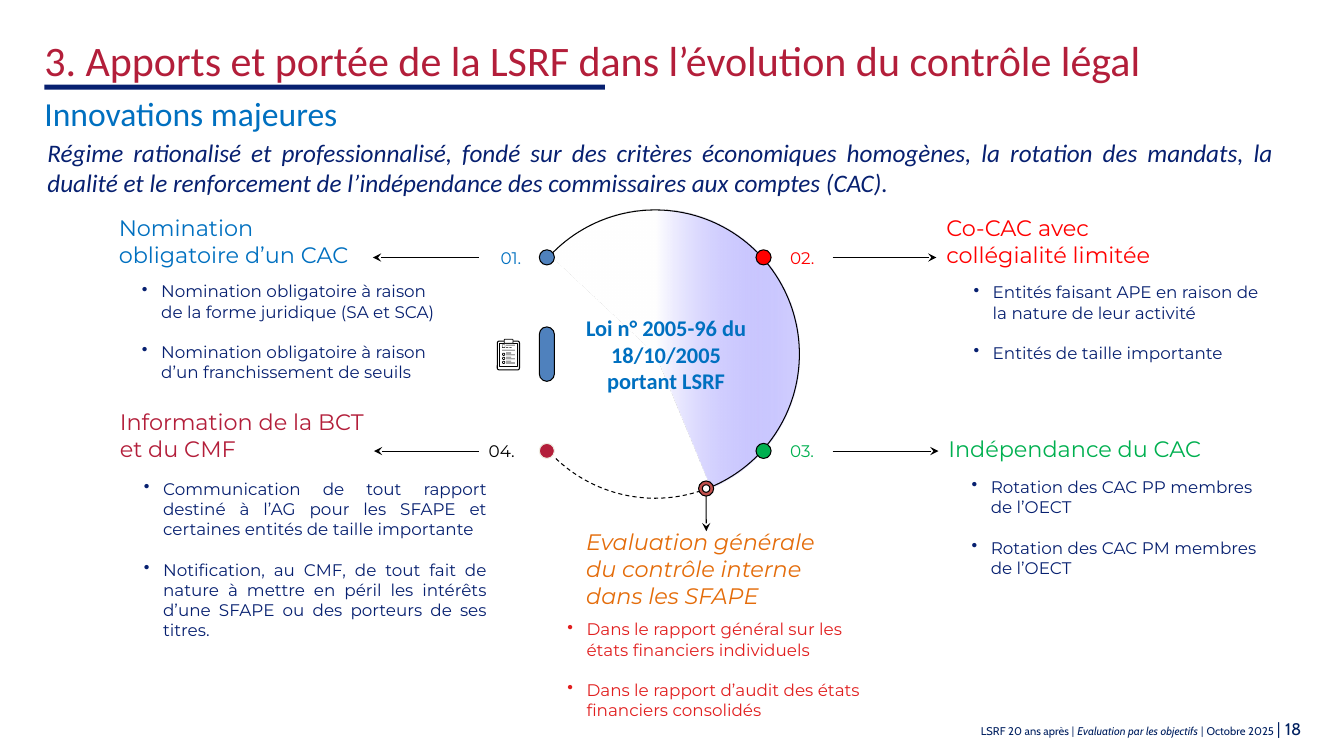
from dataclasses import dataclass

from lxml import etree
from pptx import Presentation
from pptx.dml.color import RGBColor
from pptx.enum.dml import MSO_LINE
from pptx.enum.shapes import MSO_CONNECTOR, MSO_SHAPE
from pptx.enum.text import MSO_ANCHOR as Anchor, PP_ALIGN as Align
from pptx.oxml import parse_xml
from pptx.oxml.ns import nsdecls, qn
from pptx.util import Inches, Pt

WIDTH, HEIGHT = Inches(13.33), Inches(7.5)
COLUMN, ROW = WIDTH / 160, HEIGHT / 90
PADDING = Inches(0.1)
COLORS = {
    "navy": "072070", "footer": "002060", "crimson": "B31E3A", "blue": "0070C0",
    "steel": "4F81BD", "red": "FF0000", "green": "00B050", "orange": "E46C0A",
    "scarlet": "E11F1F", "brick": "C0504D", "violet": "6C63FF", "cream": "EEECE1",
    "black": "000000", "white": "FFFFFF",
}


@dataclass
class Box:
    """Area counted in grid columns and rows."""
    x: float
    y: float
    w: float
    h: float

    def emu(self):
        return (round(self.x * COLUMN), round(self.y * ROW),
                round(self.w * COLUMN), round(self.h * ROW))

    def share(self, x, y, w, h):
        """Sub-area given as shares of this box."""
        return Box(self.x + x * self.w, self.y + y * self.h, w * self.w, h * self.h)

    def around(self, dx, dy, w, h):
        """Area centred at an offset from this box's centre."""
        return Box(self.x + self.w / 2 + dx - w / 2, self.y + self.h / 2 + dy - h / 2, w, h)


def rgb(name):
    return RGBColor.from_string(COLORS[name])


def add_shape(page, kind, box, fill=None, line=None, width=0.75):
    shape = page.shapes.add_shape(kind, *box.emu())
    shape.shadow.inherit = False
    if fill:
        shape.fill.solid()
        shape.fill.fore_color.rgb = rgb(fill)
    else:
        shape.fill.background()
    if line:
        shape.line.color.rgb = rgb(line)
        shape.line.width = Pt(width)
    else:
        shape.line.fill.background()
    return shape


def add_text(page, box, texts, size, color, font="Montserrat", align=Align.LEFT,
             anchor=Anchor.TOP, padded=True, bullets=False, bold=False, italic=False):
    shape = page.shapes.add_textbox(*box.emu())
    frame = shape.text_frame
    frame.word_wrap = True
    frame.vertical_anchor = anchor
    frame.margin_left = frame.margin_right = PADDING if padded else 0
    frame.margin_top = frame.margin_bottom = PADDING if padded else 0
    for index, text in enumerate(texts):
        para = frame.paragraphs[0] if index == 0 else frame.add_paragraph()
        para.text = text
        para.alignment = align
        para.font.name, para.font.size = font, Pt(size)
        para.font.bold, para.font.italic = bold, italic
        para.font.color.rgb = rgb(color)
        if index:
            para.space_before = Pt(14.5)
        if bullets:
            add_bullet(para)
    return shape


def add_bullet(para):
    props = para._p.get_or_add_pPr()
    props.set("marL", str(Inches(0.19)))
    props.set("indent", str(-Inches(0.19)))
    bullet = parse_xml(f'<a:buChar {nsdecls("a")} char="•"/>')
    props.find(qn("a:defRPr")).addprevious(bullet)


def add_arrow(page, start=(0, 0), begin=None, end=None):
    """Arrow from a grid point, or from a (shape, side) pair, to another pair."""
    x, y = round(start[0] * COLUMN), round(start[1] * ROW)
    arrow = page.shapes.add_connector(MSO_CONNECTOR.STRAIGHT, x, y, x, y)
    if begin:
        arrow.begin_connect(*begin)
    arrow.end_connect(*end)
    arrow.line.color.rgb = rgb("black")
    arrow.line.width = Pt(0.75)
    etree.SubElement(arrow.line._get_or_add_ln(), qn("a:tailEnd"), type="stealth")
    etree.SubElement(arrow._element.spPr, qn("a:effectLst"))


def add_header(page, box):
    add_shape(page, MSO_SHAPE.RECTANGLE, Box(box.x, box.y + 6.12, 66.72, 0.6), "navy")
    add_text(page, Box(box.x, box.y + 7.1, 68.76, 5), ["Innovations majeures"], 24, "blue",
             "Calibri", padded=False)
    add_text(page, Box(box.x, box.y + 0.15, box.w, 6.24),
             ["3. Apports et portée de la LSRF dans l’évolution du contrôle légal"],
             30, "crimson", "Calibri", padded=False)
    add_text(page, Box(box.x + 0.36, box.y + 12.4, box.w, 7.44),
             ["Régime rationalisé et professionnalisé, fondé sur des critères économiques "
              "homogènes, la rotation des mandats, la dualité et le renforcement de "
              "l’indépendance des commissaires aux comptes (CAC)."],
             18, "navy", "Calibri", Align.JUSTIFY, padded=False, italic=True)


def add_footer(page, box):
    footer = add_text(page, box, [""], 8, "footer", "Cabin", Align.RIGHT, padded=False)
    para = footer.text_frame.paragraphs[0]
    for text, font, size, italic in (
            ("LSRF 20 ans après ", "Cabin", 8, False), ("| ", "Lato", 8, False),
            ("Evaluation par les objectifs ", "Cabin", 8, True), ("| ", "Lato", 8, False),
            ("Octobre 2025 ", "Cabin", 8, False), ("| ", "Lato", 12, False),
            ("18", "Cabin", 12, False)):
        span = para.add_run()
        span.text = text
        span.font.name, span.font.size, span.font.italic = font, Pt(size), italic
        span.font.color.rgb = rgb("footer")


def add_arc(page, box, start, stop):
    """Clockwise arc between two angles in degrees."""
    arc = add_shape(page, MSO_SHAPE.ARC, box, line="black")
    arc.adjustments[0], arc.adjustments[1] = start * 0.6, stop * 0.6
    return arc


def add_dial(page, box):
    """Ring with its dots and label; returns the lower ring marker's box."""
    add_arc(page, box, 71.6, 134.38).line.dash_style = MSO_LINE.DASH
    sector = add_arc(page, box, 223.18, 67.44)
    props = sector._element.spPr
    props.replace(props.find(qn("a:noFill")), parse_xml(
        f'<a:gradFill {nsdecls("a")} rotWithShape="1"><a:gsLst>'
        f'<a:gs pos="0"><a:srgbClr val="{COLORS["violet"]}"><a:alpha val="30000"/></a:srgbClr></a:gs>'
        f'<a:gs pos="50000"><a:srgbClr val="{COLORS["white"]}"/></a:gs>'
        f'<a:gs pos="100000"><a:srgbClr val="{COLORS["white"]}"/></a:gs>'
        '</a:gsLst><a:lin ang="10800000" scaled="0"/></a:gradFill>'))
    for across, down, fill, line in ((-1, -1, "steel", "black"), (1, -1, "red", "black"),
                                     (-1, 1, "crimson", "cream"), (1, 1, "green", "black")):
        add_shape(page, MSO_SHAPE.OVAL, box.around(across * 12.9, down * 11.52, 1.8, 1.8),
                  fill, line)
    capsule = add_shape(page, MSO_SHAPE.ROUNDED_RECTANGLE, box.around(-12.9, 0, 1.8, 6.48),
                        "steel", "black")
    capsule.adjustments[0] = 0.5
    add_text(page, box.around(1.3, 0, 22.08, 8.28), ["Loi n° 2005-96 du 18/10/2005 portant LSRF"],
             16, "blue", "Calibri", Align.CENTER, Anchor.MIDDLE, bold=True)
    marker = box.around(6.06, 16, 1.8, 1.8)
    add_shape(page, MSO_SHAPE.DONUT, marker, "brick", "black").adjustments[0] = 0.25
    return marker


def add_clipboard(page, box):
    board = add_shape(page, MSO_SHAPE.ROUNDED_RECTANGLE, box.share(0, 0.08, 1, 0.92),
                      "white", "black", 0.75)
    board.adjustments[0] = 0.08
    add_shape(page, MSO_SHAPE.RECTANGLE, box.share(0.1, 0.15, 0.8, 0.75), None, "black", 0.5)
    add_shape(page, MSO_SHAPE.ROUND_2_SAME_RECTANGLE, box.share(0.31, 0.02, 0.4, 0.13),
              "white", "black", 0.5)
    add_shape(page, MSO_SHAPE.FRAME, box.share(0.22, 0.19, 0.14, 0.1), "black")
    for left, top, width in ((0.4, 0.2, 0.4), (0.4, 0.27, 0.1), (0.55, 0.27, 0.1),
                             (0.22, 0.36, 0.58)):
        add_shape(page, MSO_SHAPE.RECTANGLE, box.share(left, top, width, 0.02), "black")
    for item in range(3):
        top = 0.45 + item * 0.13
        add_shape(page, MSO_SHAPE.DONUT, box.share(0.22, top, 0.14, 0.1), "black")
        for line, width in enumerate((0.23, 0.4)):
            add_shape(page, MSO_SHAPE.RECTANGLE,
                      box.share(0.4, top + line * 0.06, width, 0.02), "black")


def add_branch(page, box, number, number_color, color, title, body, points, align=Align.LEFT):
    """Heading in its box, bullets in body, and an arrow from the number beside the dial."""
    on_left = box.x < 80
    number_box = Box(57 if on_left else 92.88, box.y, 6.24, box.h)
    label = add_text(page, number_box, [number], 12, number_color, anchor=Anchor.MIDDLE,
                     align=Align.RIGHT if number == "01." else Align.LEFT)
    heading = add_text(page, box, [title], 16, color, anchor=Anchor.BOTTOM)
    outward, inward = (1, 3) if on_left else (3, 1)
    add_arrow(page, begin=(label, outward), end=(heading, inward))
    add_text(page, body, points, 12, "navy", align=align, bullets=True)


def add_evaluation(page, box, marker):
    heading = add_text(page, box.share(0.06, 0, 0.83, 0.45),
                       ["Evaluation générale du contrôle interne dans les SFAPE"],
                       16, "orange", anchor=Anchor.BOTTOM, italic=True)
    add_arrow(page, (marker.x + marker.w / 2, marker.y + marker.h), end=(heading, 0))
    add_text(page, box.share(0, 0.4, 1, 0.6),
             ["Dans le rapport général sur les états financiers individuels",
              "Dans le rapport d’audit des états financiers consolidés"],
             12, "scarlet", bullets=True)


def build_slide(deck):
    page = deck.slides.add_slide(deck.slide_layouts[6])
    add_header(page, Box(5.28, 3.96, 146, 20))
    add_footer(page, Box(85.92, 85.56, 69, 2.4))
    add_clipboard(page, Box(59.2, 40.32, 2.64, 3.72))
    marker = add_dial(page, Box(60.84, 25, 34.32, 34.32))
    upper, lower = 28.2, 51.24
    add_branch(page, Box(12.96, upper, 31.44, 4.92), "01.", "blue", "blue",
               "Nomination obligatoire d’un CAC", Box(15.72, 32.28, 38.88, 15.6),
               ["Nomination obligatoire à raison de la forme juridique (SA et SCA)",
                "Nomination obligatoire à raison d’un franchissement de seuils"])
    add_branch(page, Box(111.48, upper, 31.44, 4.92), "02.", "red", "red",
               "Co-CAC avec collégialité limitée", Box(114.72, 32.4, 37.32, 15.6),
               ["Entités faisant APE en raison de la nature de leur activité",
                "Entités de taille importante"])
    add_branch(page, Box(111.72, lower, 34.32, 4.92), "03.", "green", "green",
               "Indépendance du CAC", Box(114.48, 55.56, 37.32, 15.6),
               ["Rotation des CAC PP membres de l’OECT", "Rotation des CAC PM membres de l’OECT"])
    add_branch(page, Box(13.08, lower, 31.44, 4.92), "04.", "black", "crimson",
               "Information de la BCT et du CMF", Box(15.96, 55.8, 43.2, 20.88),
               ["Communication de tout rapport destiné à l’AG pour les SFAPE et certaines "
                "entités de taille importante",
                "Notification, au CMF, de tout fait de nature à mettre en péril les intérêts "
                "d’une SFAPE ou des porteurs de ses titres."], Align.JUSTIFY)
    add_evaluation(page, Box(66.36, 63.24, 37.32, 23.2), marker)


def main():
    deck = Presentation()
    deck.slide_width, deck.slide_height = WIDTH, HEIGHT
    build_slide(deck)
    deck.save("out.pptx")


if __name__ == "__main__":
    main()
